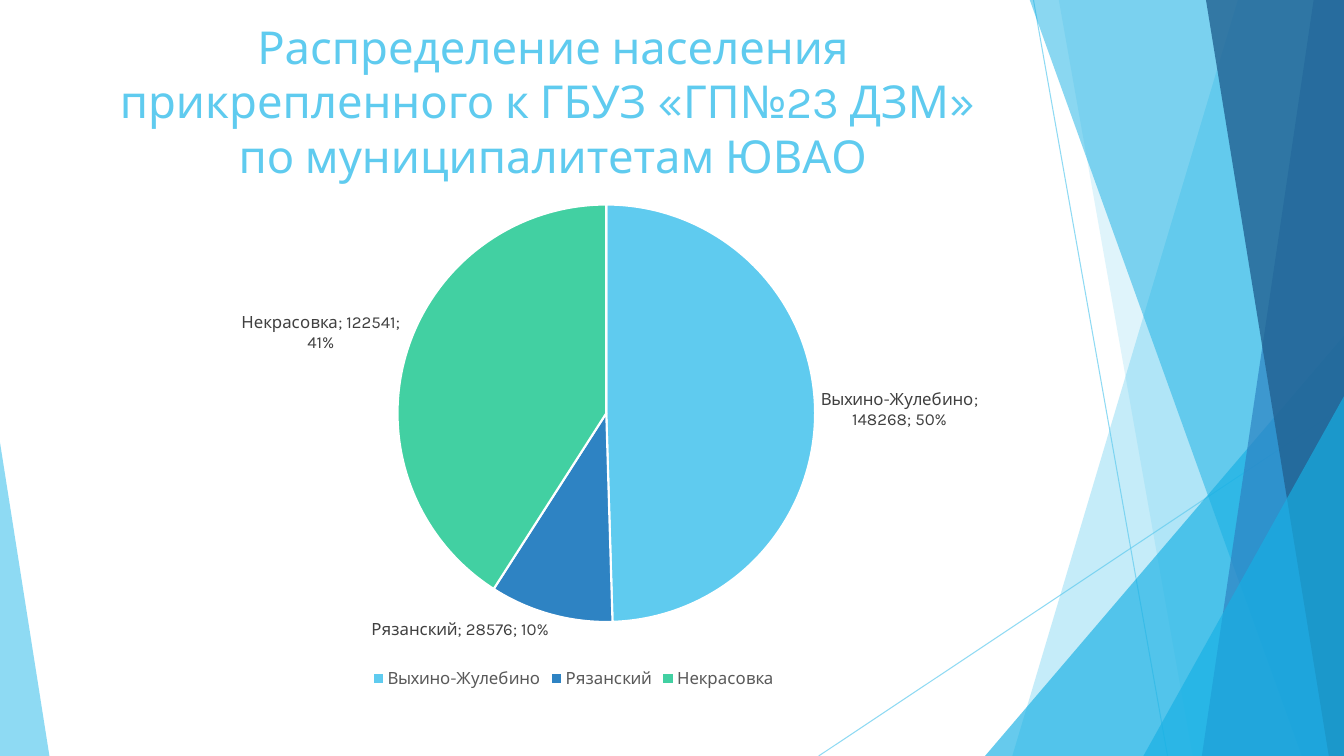
import pptx
import pptx.chart.data
import pptx.dml.color
import pptx.enum.chart
import pptx.enum.shapes
import pptx.enum.text
import pptx.oxml
import pptx.oxml.ns
import pptx.util
from lxml import etree

Inches = pptx.util.Inches
Pt = pptx.util.Pt
qn = pptx.oxml.ns.qn


def color(code):
    return pptx.dml.color.RGBColor.from_string(code)


def fade(fill, alpha):
    tag = fill._xPr.find(".//" + qn("a:srgbClr"))
    etree.SubElement(tag, qn("a:alpha")).set("val", str(alpha * 1000))


def style(font, size, code, face):
    font.size = Pt(size)
    font.name = face
    font.color.rgb = color(code)


def write(frame, text, size=12, code="000000", face="Karla", align=None):
    para = frame.paragraphs[0]
    para.text = text
    para.alignment = align
    for run in para.runs:
        style(run.font, size, code, face)


class Deck:
    face = "Karla"
    sky = "5FCBEF"
    aqua = "17B0E4"
    blue = "2E83C3"
    navy = "226292"
    green = "42D0A2"

    def __init__(self, show):
        self.slide = show.slides.add_slide(show.slide_layouts[6])
        self.shapes = self.slide.shapes

    def paint(self, shape, code, alpha):
        shape.shadow.inherit = False
        shape.fill.solid()
        shape.fill.fore_color.rgb = color(code)
        fade(shape.fill, alpha)
        shape.line.fill.background()

    def line(self, x1, y1, x2, y2):
        line = self.shapes.add_connector(
            pptx.enum.shapes.MSO_CONNECTOR.STRAIGHT,
            Inches(x1), Inches(y1), Inches(x2), Inches(y2))
        line.line.width = Pt(0.75)
        line.line.fill.solid()
        line.line.color.rgb = color(self.sky)
        fade(line.line.fill, 70)
        etree.SubElement(line._element.spPr, qn("a:effectLst"))

    def band(self, top, base, code, alpha):
        pen = self.shapes.build_freeform(Inches(top), Inches(-0.01), scale=1.0)
        ends = [(13.33, -0.01), (13.33, 7.5), (base, 7.5)]
        pen.add_line_segments([(Inches(x), Inches(y)) for x, y in ends])
        self.paint(pen.convert_to_shape(), code, alpha)

    def wedge(self, x, y, wide, high, tip, code, alpha):
        shape = self.shapes.add_shape(
            pptx.enum.shapes.MSO_SHAPE.ISOSCELES_TRIANGLE,
            Inches(x), Inches(y), Inches(wide), Inches(high))
        shape.adjustments[0] = tip
        self.paint(shape, code, alpha)

    def title(self, text, x, y, wide, high):
        box = self.shapes.add_textbox(
            Inches(x), Inches(y), Inches(wide), Inches(high))
        frame = box.text_frame
        frame.word_wrap = True
        frame.vertical_anchor = pptx.enum.text.MSO_ANCHOR.TOP
        write(frame, text, size=32.4, code=self.sky, face=self.face,
              align=pptx.enum.text.PP_ALIGN.CENTER)

    def pie(self, parts, x, y, wide, high):
        data = pptx.chart.data.CategoryChartData()
        data.categories = [name for name, count, code in parts]
        data.add_series("Series 1", [count for name, count, code in parts])
        chart = self.shapes.add_chart(
            pptx.enum.chart.XL_CHART_TYPE.PIE,
            Inches(x), Inches(y), Inches(wide), Inches(high), data).chart
        style(chart.font, 10, "000000", self.face)
        chart.has_title = False
        chart.has_legend = True
        chart.legend.position = pptx.enum.chart.XL_LEGEND_POSITION.BOTTOM
        chart.legend.include_in_layout = False
        style(chart.legend.font, 12, "595959", self.face)
        plot = chart.plots[0]
        plot.vary_by_categories = True
        for spot, (name, count, code) in enumerate(parts):
            form = plot.series[0].points[spot].format
            form.fill.solid()
            form.fill.fore_color.rgb = color(code)
            form.line.width = Pt(1.5)
            form.line.color.rgb = color("FFFFFF")
        self.label(plot.series[0].data_labels)
        self.place(chart, x=0.31, y=0.03, w=0.45, h=0.83)

    def label(self, labels):
        labels.show_category_name = True
        labels.show_value = True
        labels.show_percentage = True
        labels.position = pptx.enum.chart.XL_LABEL_POSITION.OUTSIDE_END
        style(labels.font, 12, "404040", self.face)
        mark = etree.Element(qn("c:separator"))
        mark.text = "; "
        node = labels._element
        last = node.find(qn("c:showBubbleSize"))
        if last is None:
            last = node.find(qn("c:showPercent"))
        last.addnext(mark)

    def place(self, chart, **spots):
        area = chart._chartSpace.chart.plotArea
        for old in area.findall(qn("c:layout")):
            area.remove(old)
        outer = etree.Element(qn("c:layout"))
        inner = etree.SubElement(outer, qn("c:manualLayout"))
        rules = {"layoutTarget": "inner", "xMode": "edge", "yMode": "edge"}
        for name, val in {**rules, **spots}.items():
            etree.SubElement(inner, qn("c:" + name)).set("val", str(val))
        area.insert(0, outer)


def main():
    show = pptx.Presentation()
    show.slide_width = Inches(13.33)
    show.slide_height = Inches(7.5)
    deck = Deck(show)
    deck.line(10.25, 0, 11.58, 7.5)
    deck.line(13.33, 4.03, 8.12, 7.5)
    deck.band(12.28, 10.04, deck.sky, 36)
    deck.band(10.5, 11.83, deck.sky, 20)
    deck.wedge(9.77, 3.33, 3.56, 4.17, 1, deck.aqua, 66)
    deck.band(10.21, 12.91, deck.aqua, 50)
    deck.band(13.03, 11.92, deck.blue, 70)
    deck.band(11.96, 13.18, deck.navy, 80)
    deck.wedge(11.34, 3.93, 1.99, 3.57, 1, deck.aqua, 66)
    deck.wedge(0, 4.39, 0.49, 3.11, 0, deck.sky, 70)
    deck.title("Распределение населения прикрепленного к ГБУЗ «ГП№23 ДЗМ» \v"
               "по муниципалитетам ЮВАО", 0.65, 0.14, 9.67, 1.44)
    parts = [("Выхино-Жулебино", 148268, deck.sky),
             ("Рязанский", 28576, deck.blue),
             ("Некрасовка", 122541, deck.green)]
    deck.pie(parts, 1.06, 1.88, 9.26, 4.99)
    show.save("out.pptx")


if __name__ == "__main__":
    main()
